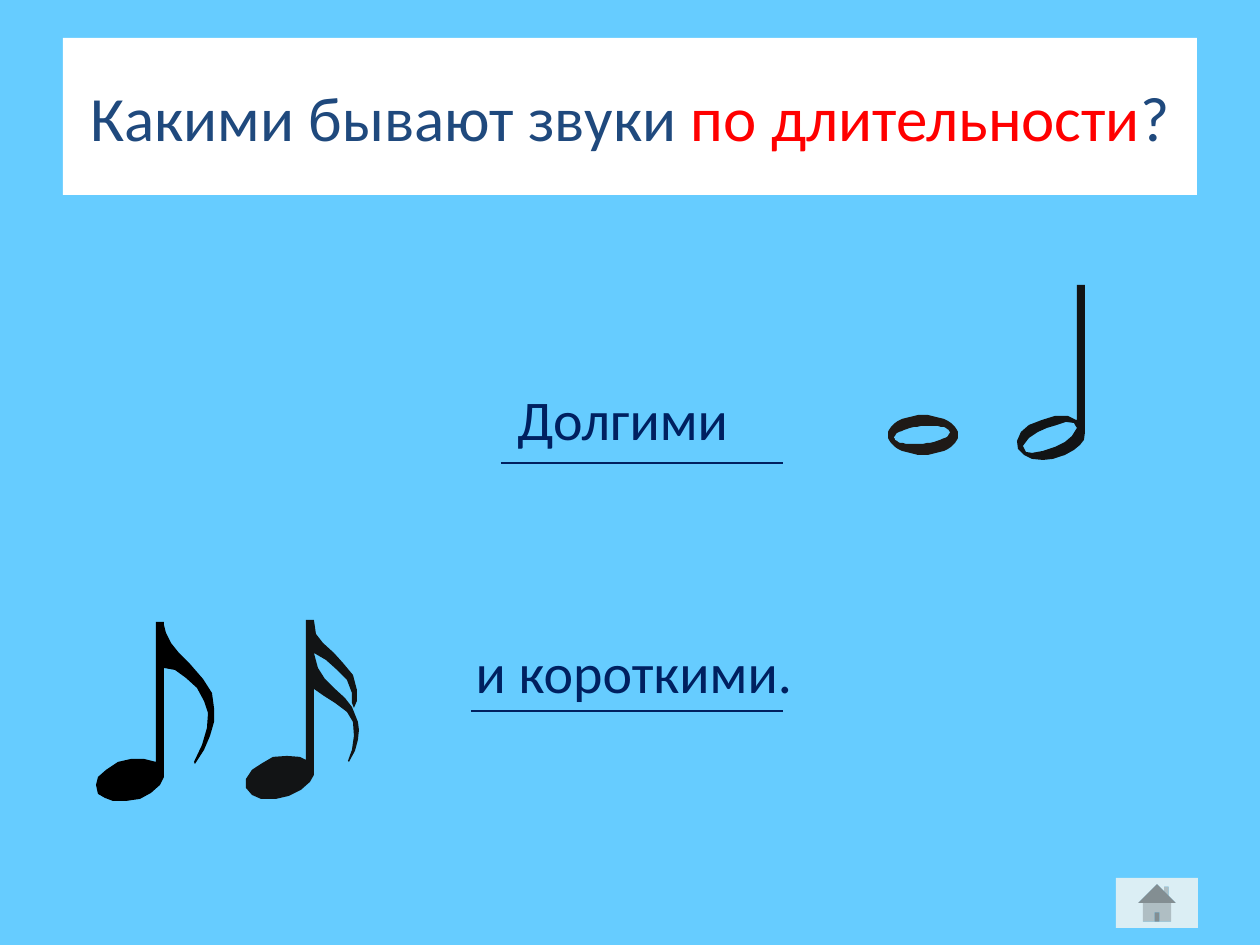
from math import cos, pi, radians, sin

from lxml import etree
from pptx import Presentation
from pptx.dml.color import RGBColor
from pptx.enum.shapes import MSO_CONNECTOR, MSO_SHAPE
from pptx.enum.text import MSO_ANCHOR, MSO_AUTO_SIZE, PP_ALIGN
from pptx.oxml.ns import qn
from pptx.util import Pt

RECT, HOME = MSO_SHAPE.RECTANGLE, MSO_SHAPE.ACTION_BUTTON_HOME
STRAIGHT = MSO_CONNECTOR.STRAIGHT
MIDDLE, TOP, CENTER = MSO_ANCHOR.MIDDLE, MSO_ANCHOR.TOP, PP_ALIGN.CENTER
GROW = MSO_AUTO_SIZE.SHAPE_TO_FIT_TEXT

PX = 914400 / 126  # EMU in one px


class Theme:
    sky, panel, button = "66CCFF", "FFFFFF", "DBEEF4"
    title, accent, answer = "1F497D", "FF0000", "002060"
    brown, ink, black = "1F1A17", "121415", "000000"
    font, spacer_font = "Calibri", "Times New Roman"
    title_size, answer_size, spacer_size = 36, 32, 42
    rule_width = 1.5


def ellipse(cx, cy, rx, ry, tilt=0, steps=48):
    """Points of an ellipse turned by tilt degrees."""
    c, s = cos(radians(tilt)), sin(radians(tilt))
    angles = [2 * pi * i / steps for i in range(steps)]
    return [(cx + rx * cos(a) * c - ry * sin(a) * s,
             cy + rx * cos(a) * s + ry * sin(a) * c) for a in angles]


# Content: runs are (text, colour, size, font, bold italic)
TITLE_BOX = (63, 38, 1134, 157)
HOME_BOX = (1116, 878, 82, 50)
TITLE = [(text, colour, Theme.title_size, Theme.font, False) for text, colour in (
    ("Какими бывают звуки ", Theme.title),
    ("по длительности", Theme.accent),
    ("?", Theme.title),
)]
ANSWERS = [
    ((435, 359, 394, 105), [
        ("Долгими", Theme.answer, Theme.answer_size, Theme.font, False),
        (" ", Theme.answer, Theme.spacer_size, Theme.spacer_font, True)]),
    ((437, 629, 394, 83), [
        ("и короткими.", Theme.answer, Theme.answer_size, Theme.font, False)]),
]
RULES = [(501, 783, 463), (471, 783, 711)]  # left, right, y

# Notes: each is a colour and its closed outlines
WHOLE = [ellipse(923, 435, 35, 20), ellipse(922, 435, 28, 9, -6)]
HALF = [
    [(1076, 420), (1077, 420), (1077, 285), (1085, 285), (1085, 432), (1084, 440),
     (1080, 445), (1074, 450), (1065, 455), (1053, 459), (1043, 460), (1032, 459),
     (1024, 455), (1018, 449), (1017, 441), (1021, 432), (1029, 425), (1042, 420),
     (1055, 416), (1068, 416)],
    [(1074, 423), (1066, 422), (1057, 425), (1047, 428), (1038, 432), (1029, 438),
     (1023, 446), (1026, 452), (1032, 453), (1043, 451), (1055, 447), (1065, 442),
     (1072, 436), (1077, 428), (1075, 425)],
]
EIGHTH = [
    [(164, 625), (166, 633), (171, 643), (179, 653), (190, 664), (203, 679),
     (212, 693), (214, 708), (214, 722), (210, 736), (204, 750), (195, 764),
     (194, 762), (202, 745), (207, 728), (208, 713), (204, 701), (197, 688),
     (186, 678), (175, 670), (164, 668), (164, 777), (160, 785), (151, 793),
     (140, 799), (126, 801), (113, 801), (105, 798), (98, 794), (96, 785),
     (98, 777), (106, 770), (118, 762), (131, 759), (144, 759), (156, 762),
     (156, 622), (164, 622)],
]
SIXTEENTH = [
    [(352, 707), (345, 698), (334, 688), (325, 679), (318, 668), (314, 653),
     (326, 660), (336, 669), (347, 680), (352, 693), (352, 703), (354, 708),
     (357, 701), (357, 690), (353, 675), (343, 663), (334, 653), (323, 643),
     (316, 634), (314, 620), (306, 620), (306, 760), (300, 757), (287, 756),
     (273, 757), (261, 764), (252, 770), (246, 779), (246, 788), (252, 795),
     (261, 799), (276, 799), (289, 796), (301, 790), (310, 782), (314, 775),
     (314, 689), (324, 696), (335, 703), (347, 712), (353, 722), (354, 736),
     (352, 750), (348, 761), (349, 762), (355, 751), (358, 740), (359, 730),
     (358, 722), (354, 712)],
]
NOTE_GROUPS = [
    [(Theme.brown, WHOLE), (Theme.ink, HALF)],
    [(Theme.black, EIGHTH), (Theme.ink, SIXTEENTH)],
]


def emu(*lengths):
    return [round(v * PX) for v in lengths]


def rgb(colour):
    return RGBColor.from_string(colour)


def paint(sp, colour):
    sp.shadow.inherit = False
    sp.fill.solid()
    sp.fill.fore_color.rgb = rgb(colour)
    sp.line.fill.background()


def write(sp, runs, anchor):
    tf = sp.text_frame
    tf.word_wrap = True
    tf.vertical_anchor = anchor
    p = tf.paragraphs[0]
    p.alignment = CENTER
    for text, colour, size, font, slanted in runs:
        r = p.add_run()
        r.text = text
        r.font.name, r.font.size = font, Pt(size)
        r.font.bold = r.font.italic = slanted
        r.font.color.rgb = rgb(colour)
    return tf


def add_note(shapes, colour, outlines):
    first, *holes = outlines
    builder = shapes.build_freeform(*first[0], scale=PX)
    builder.add_line_segments(first[1:], close=True)
    for hole in holes:
        builder.move_to(*hole[0])
        builder.add_line_segments(hole[1:], close=True)
    paint(builder.convert_to_shape(), colour)


def main():
    prs = Presentation()
    prs.slide_width, prs.slide_height = emu(1260, 945)
    s = prs.slides.add_slide(prs.slide_layouts[6])
    s.background.fill.solid()
    s.background.fill.fore_color.rgb = rgb(Theme.sky)

    # Home button and title panel
    paint(s.shapes.add_shape(HOME, *emu(*HOME_BOX)), Theme.button)
    panel = s.shapes.add_shape(RECT, *emu(*TITLE_BOX))
    paint(panel, Theme.panel)
    write(panel, TITLE, MIDDLE)

    # Answers
    for box, runs in ANSWERS:
        tf = write(s.shapes.add_textbox(*emu(*box)), runs, TOP)
        tf.margin_left, tf.margin_right, tf.margin_top, tf.margin_bottom = emu(15, 15, 8, 8)
        tf.auto_size = GROW

    # Long and short notes
    for notes in NOTE_GROUPS:
        group = s.shapes.add_group_shape()
        for colour, outlines in notes:
            add_note(group.shapes, colour, outlines)

    # Rules under the answers
    for left, right, y in RULES:
        rule = s.shapes.add_connector(STRAIGHT, *emu(left, y, right, y))
        rule.line.color.rgb = rgb(Theme.answer)
        rule.line.width = Pt(Theme.rule_width)
        etree.SubElement(rule._element.spPr, qn("a:effectLst"))

    prs.save("out.pptx")


if __name__ == "__main__":
    main()
